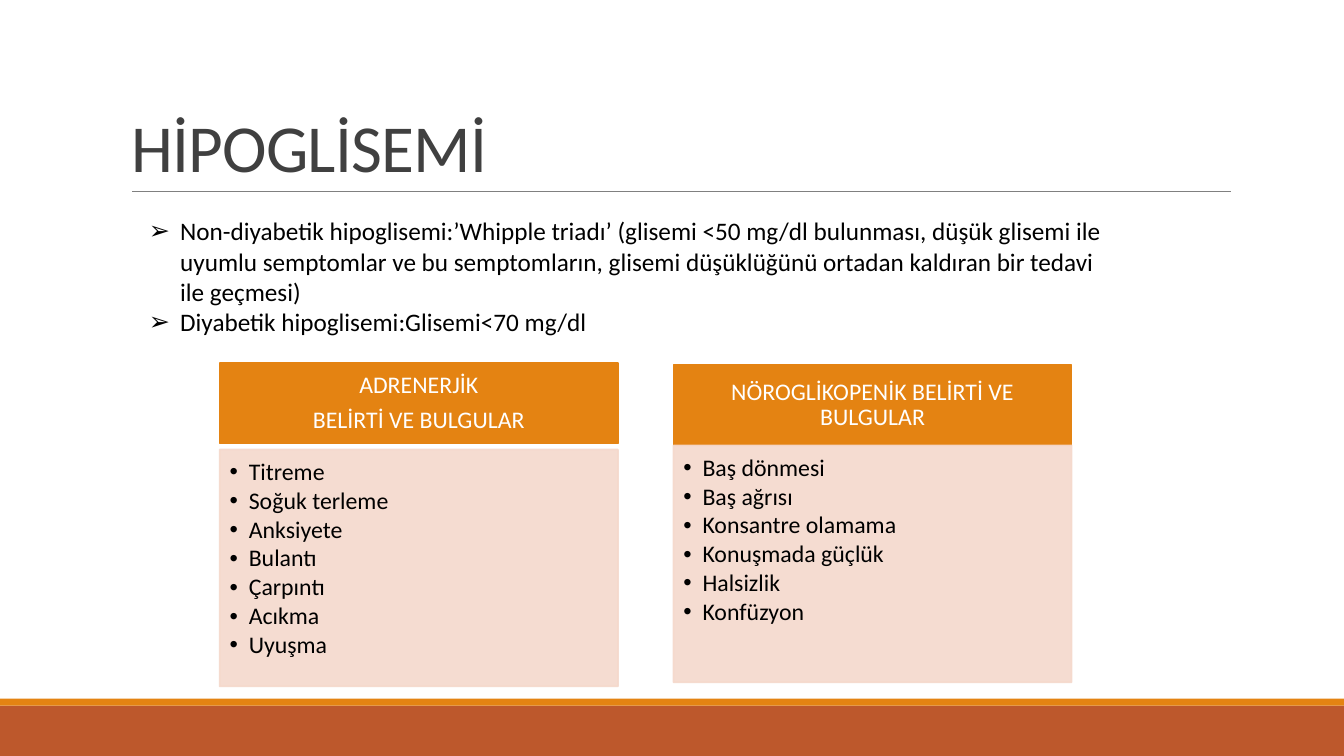
import pptx
import pptx.util
import pptx.dml.color
import pptx.enum.shapes
import pptx.enum.text
import pptx.oxml.ns
import lxml.etree

Pt = pptx.util.Pt
Inches = pptx.util.Inches
RGB = pptx.dml.color.RGBColor.from_string
Align = pptx.enum.text.PP_ALIGN
Anchor = pptx.enum.text.MSO_ANCHOR
qn = pptx.oxml.ns.qn

hues = {"rust": "BD582C", "gold": "E48312", "pale": "F5D9CC", "rule": "808080",
        "title": "404040", "ink": "000000", "white": "FFFFFF"}

deck = pptx.Presentation()
deck.slide_width, deck.slide_height = Inches(13.33), Inches(7.5)
col, row = deck.slide_width / 100, deck.slide_height / 100
slide = deck.slides.add_slide(deck.slide_layouts[5])


def block(left, top, width, height, hue, edge=False):
    shape = slide.shapes.add_shape(
        pptx.enum.shapes.MSO_SHAPE.RECTANGLE,
        int(left * col), int(top * row), int(width * col), int(height * row))
    shape.shadow.inherit = False
    shape.fill.solid()
    shape.fill.fore_color.rgb = RGB(hues[hue])
    if edge:
        shape.line.color.rgb = RGB(hues[hue])
        shape.line.width = Pt(1.25)
    else:
        shape.line.fill.background()
    return shape


def write(frame, lines, size, hue, space=1, after=0, align=Align.LEFT, mark=None, dent=0):
    frame.word_wrap = True
    frame.text = "\n".join(lines)
    for para in frame.paragraphs:
        para.alignment = align
        para.line_spacing = space
        para.space_after = Pt(after)
        font = para.runs[0].font
        font.name, font.size = "Calibri", Pt(size)
        font.color.rgb = RGB(hues[hue])
        if mark:
            props = para._p.get_or_add_pPr()
            props.set("marL", str(Inches(dent)))
            props.set("indent", str(-Inches(dent)))
            lxml.etree.SubElement(props, qn("a:buFont")).set("typeface", "Arial")
            lxml.etree.SubElement(props, qn("a:buChar")).set("char", mark)


block(0, 93.33, 100, 6.67, "rust")
block(0, 92.4, 100, 0.93, "gold")

rule = slide.shapes.add_connector(
    pptx.enum.shapes.MSO_CONNECTOR.STRAIGHT,
    int(9.83 * col), int(25.33 * row), int(91.6 * col), int(25.33 * row))
rule.line.color.rgb = RGB(hues["rule"])
rule.line.width = Pt(0.5)
lxml.etree.SubElement(rule._element.spPr, qn("a:effectLst"))

title = slide.shapes.title
title.left, title.top = int(9 * col), int(4.13 * row)
title.width, title.height = int(82.5 * col), int(21.2 * row)
write(title.text_frame, ["HİPOGLİSEMİ"], 48, "title", space=0.85)
title.text_frame.vertical_anchor = Anchor.BOTTOM
title.text_frame.auto_size = pptx.enum.text.MSO_AUTO_SIZE.NONE
title.text_frame.paragraphs[0].runs[0].font._element.set("spc", "-50")

intro = slide.shapes.add_textbox(
    int(10.35 * col), int(27.87 * row), int(73.3 * col), int(17.47 * row))
write(intro.text_frame, [
    "Non-diyabetik hipoglisemi:’Whipple triadı’ (glisemi <50 mg/dl bulunması, düşük glisemi ile "
    "uyumlu semptomlar ve bu semptomların, glisemi düşüklüğünü ortadan kaldıran bir tedavi "
    "ile geçmesi)",
    "Diyabetik hipoglisemi:Glisemi<70 mg/dl"], 18, "ink", mark="➢", dent=0.31)

cards = [
    (16.35, 48, 59.47, ["ADRENERJİK", "BELİRTİ VE BULGULAR"],
     ["Titreme", "Soğuk terleme", "Anksiyete", "Bulantı", "Çarpıntı", "Acıkma", "Uyuşma"]),
    (50.11, 48.27, 58.93, ["NÖROGLİKOPENİK BELİRTİ VE BULGULAR"],
     ["Baş dönmesi", "Baş ağrısı", "Konsantre olamama", "Konuşmada güçlük", "Halsizlik",
      "Konfüzyon"]),
]
for left, top, low, heads, signs in cards:
    head = block(left, top, 29.63, 10.67, "gold", edge=True)
    body = block(left, low, 29.63, 31.33, "pale", edge=True)
    for tone in body._element.spPr.iter(qn("a:srgbClr")):
        lxml.etree.SubElement(tone, qn("a:alpha")).set("val", "90000")
    for shape, pads, hold in ((head, (0.13, 0.08, 0.13, 0.08), Anchor.MIDDLE),
                              (body, (0.1, 0.1, 0.13, 0.15), Anchor.TOP)):
        frame = shape.text_frame
        frame.vertical_anchor = hold
        (frame.margin_left, frame.margin_top,
         frame.margin_right, frame.margin_bottom) = map(Inches, pads)
    write(head.text_frame, heads, 17, "white", 0.9, 6, Align.CENTER)
    write(body.text_frame, signs, 17, "ink", 0.9, 2.3, mark="•", dent=0.19)

deck.save("out.pptx")
